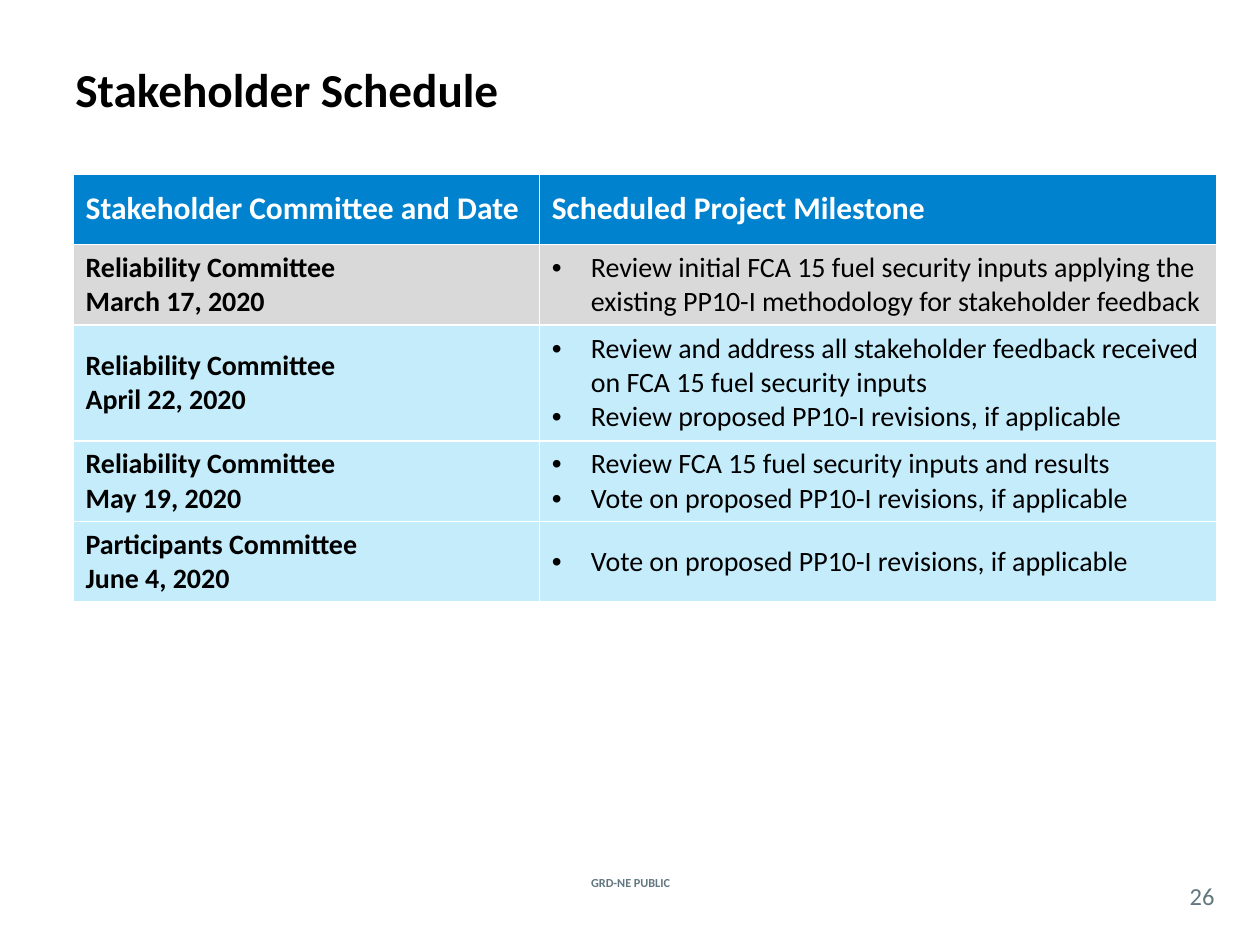
import pptx
import pptx.util
import pptx.dml.color
import pptx.enum.text
import pptx.oxml
import pptx.oxml.ns
from lxml import etree

Inches = pptx.util.Inches
Pt = pptx.util.Pt
ALIGN = pptx.enum.text.PP_ALIGN
MIDDLE = pptx.enum.text.MSO_ANCHOR.MIDDLE

COLORS = {
    "black": "000000",
    "white": "FFFFFF",
    "header": "0082CF",
    "past": "D9D9D9",
    "upcoming": "C5ECFB",
    "footer": "62777F",
}

FORMATS = {
    "title": {"size": Pt(27), "bold": True, "color": "black"},
    "header": {"size": Pt(18), "bold": True, "color": "white"},
    "committee": {"size": Pt(16), "bold": True, "color": "black"},
    "milestone": {"size": Pt(16), "bold": False, "color": "black"},
    "label": {"size": Pt(7), "bold": True, "color": "footer"},
    "number": {"size": Pt(14), "bold": False, "color": "footer"},
}

HEADERS = ["Stakeholder Committee and Date", "Scheduled Project Milestone"]
SCHEDULE = [
    (["Reliability Committee", "March 17, 2020"],
     ["Review initial FCA 15 fuel security inputs applying the existing "
      "PP10-I methodology for stakeholder feedback"], "past"),
    (["Reliability Committee", "April 22, 2020"],
     ["Review and address all stakeholder feedback received on FCA 15 fuel security inputs",
      "Review proposed PP10-I revisions, if applicable"], "upcoming"),
    (["Reliability Committee", "May 19, 2020"],
     ["Review FCA 15 fuel security inputs and results",
      "Vote on proposed PP10-I revisions, if applicable"], "upcoming"),
    (["Participants Committee", "June 4, 2020"],
     ["Vote on proposed PP10-I revisions, if applicable"], "upcoming"),
]


def rgb(name):
    return pptx.dml.color.RGBColor.from_string(COLORS[name])


def add_bullet(p):
    pPr = p._p.get_or_add_pPr()
    pPr.set("marL", str(Inches(0.31)))
    pPr.set("indent", str(Inches(-0.31)))
    for tag, key, value in (("a:buFont", "typeface", "Arial"), ("a:buChar", "char", "•")):
        etree.SubElement(pPr, pptx.oxml.ns.qn(tag)).set(key, value)


def write_lines(tf, lines, style, align=ALIGN.LEFT, bullet=False):
    for i, line in enumerate(lines):
        p = tf.paragraphs[0] if i == 0 else tf.add_paragraph()
        p.alignment = align
        if bullet:
            add_bullet(p)
        r = p.add_run()
        r.text = line
        r.font.name = "Calibri"
        for key, value in FORMATS[style].items():
            if key == "color":
                r.font.color.rgb = rgb(value)
            else:
                setattr(r.font, key, value)


def add_text(s, box, text, style, align=ALIGN.LEFT, margin=None):
    tf = s.shapes.add_textbox(*map(Inches, box)).text_frame
    tf.word_wrap = True
    tf.vertical_anchor = MIDDLE
    if margin is not None:
        for side in ("left", "top", "right", "bottom"):
            setattr(tf, f"margin_{side}", Inches(margin))
    write_lines(tf, [text], style, align)


def add_borders(cell, color):
    tcPr = cell._tc.get_or_add_tcPr()
    for i, side in enumerate(("lnL", "lnR", "lnT", "lnB")):
        tcPr.insert(i, pptx.oxml.parse_xml(
            f'<a:{side} {pptx.oxml.ns.nsdecls("a")} w="{Pt(1)}"><a:solidFill>'
            f'<a:srgbClr val="{COLORS[color]}"/></a:solidFill></a:{side}>'))


def fill_cell(cell, lines, style, fill, bullet=False):
    cell.fill.solid()
    cell.fill.fore_color.rgb = rgb(fill)
    cell.vertical_anchor = MIDDLE
    add_borders(cell, "white")
    write_lines(cell.text_frame, lines, style, bullet=bullet)


def add_schedule(s, box):
    table = s.shapes.add_table(len(SCHEDULE) + 1, 2, *map(Inches, box)).table
    for col, width in zip(table.columns, (3.7, box[2] - 3.7)):
        col.width = Inches(width)
    for row, height in zip(table.rows, (0.56, 0.64, 0.92, 0.64, 0.64)):
        row.height = Inches(height)
    for col, header in enumerate(HEADERS):
        fill_cell(table.cell(0, col), [header], "header", "header")
    for row, (committee, milestones, fill) in enumerate(SCHEDULE, 1):
        fill_cell(table.cell(row, 0), committee, "committee", fill)
        fill_cell(table.cell(row, 1), milestones, "milestone", fill, bullet=True)


def add_footer(s, label_box, number_box):
    add_text(s, label_box, "GRD-NE PUBLIC", "label", ALIGN.CENTER)
    add_text(s, number_box, "26", "number", ALIGN.CENTER, margin=0)


def main():
    prs = pptx.Presentation()
    prs.slide_width, prs.slide_height = Inches(10), Inches(7.5)
    s = prs.slides.add_slide(prs.slide_layouts[6])
    add_text(s, (0.5, 0.08, 9.17, 1.25), "Stakeholder Schedule", "title")
    add_schedule(s, (0.58, 1.38, 9.08, 3.4))
    add_footer(s, (4.27, 6.92, 1.47, 0.17), (9.33, 6.96, 0.42, 0.29))
    prs.save("out.pptx")


if __name__ == "__main__":
    main()
